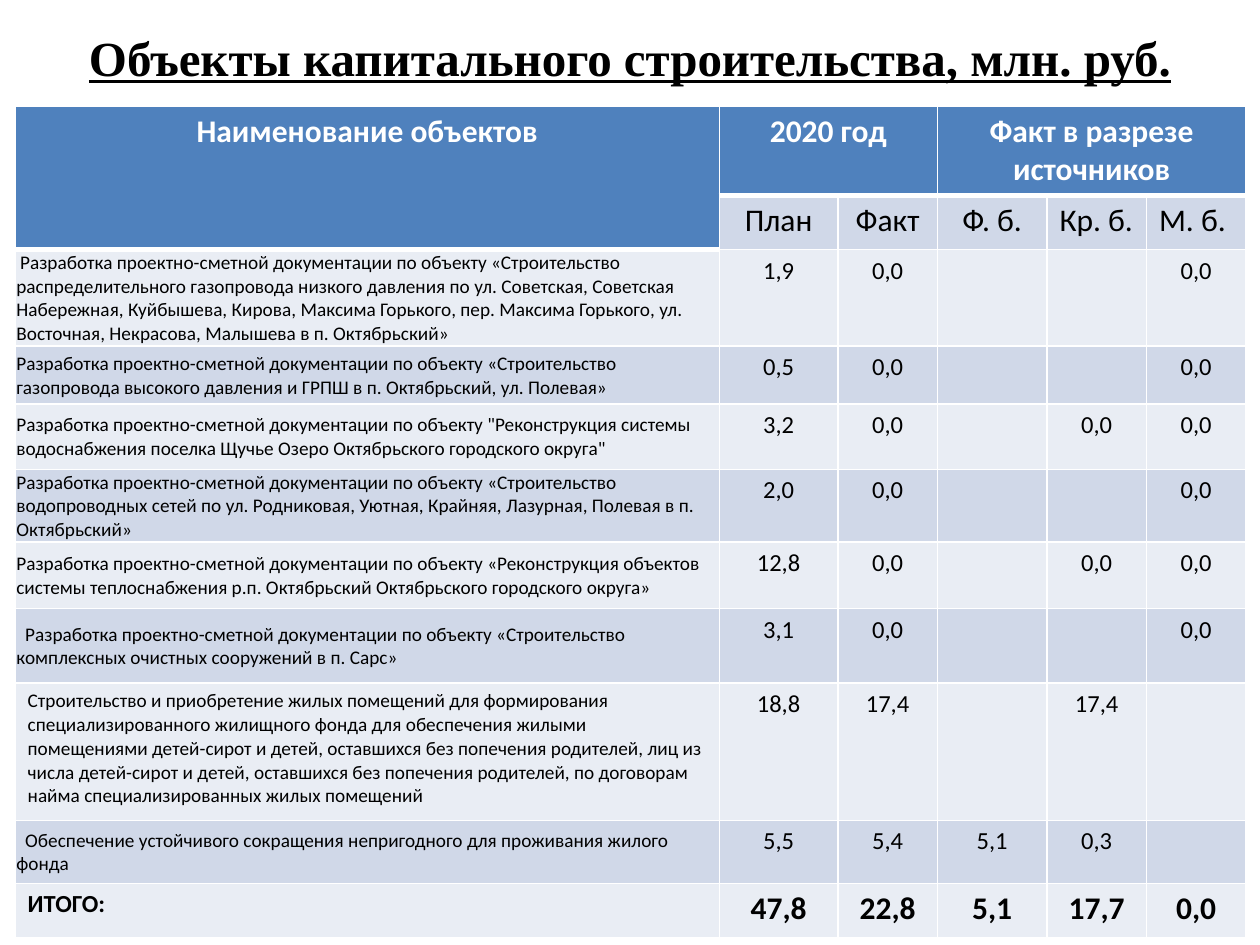
from pptx import Presentation
from pptx.dml.color import RGBColor as Rgb
from pptx.enum.text import MSO_ANCHOR as Anchor, PP_ALIGN as Align
from pptx.oxml.ns import qn
from pptx.util import Inches, Pt
from lxml.etree import SubElement

COLORS = {
    "header": "4F81BD",
    "dark": "D0D8E8",
    "light": "E9EDF4",
    "white": "FFFFFF",
    "black": "000000",
}
SLIDE_WIDTH, SLIDE_HEIGHT = Inches(10), Inches(7.5)
COLUMN_INCHES = [5.59, 0.94, 0.79, 0.87, 0.79, 0.79]
ROW_INCHES = [0.68, 0.43, 0.75, 0.46, 0.52, 0.5, 0.53, 0.59, 1.09, 0.5, 0.43]

TITLE_FORMAT = {"name": "Times New Roman", "size": Pt(28), "bold": True, "underline": True}
HEADER_FORMAT = {"name": "Calibri", "size": Pt(18), "bold": True}
SUBHEADER_FORMAT = {"name": "Calibri", "size": Pt(18), "bold": False}
NAME_FORMAT = {"name": "Calibri", "size": Pt(11), "bold": False}
VALUE_FORMAT = {"name": "Calibri", "size": Pt(14), "bold": False}
TOTAL_NAME_FORMAT = {"name": "Calibri", "size": Pt(14), "bold": True}
TIGHT_CELL = {
    "vertical_anchor": Anchor.MIDDLE,
    "margin_left": Inches(0.01),
    "margin_right": Inches(0.01),
    "margin_top": Inches(0.01),
    "margin_bottom": 0,
}

TITLE = "Объекты капитального строительства, млн. руб."
GROUPS = [
    (0, 1, 0, "Наименование объектов"),
    (1, 0, 2, "2020 год"),
    (3, 0, 5, "Факт в разрезе источников"),
]
SUBHEADERS = ["План", "Факт", "Ф. б.", "Кр. б.", "М. б."]
PROJECT = "Разработка проектно-сметной документации по объекту "
OBJECTS = [
    (PROJECT + "«Строительство распределительного газопровода низкого давления по "
     "ул. Советская, Советская Набережная, Куйбышева, Кирова, Максима Горького, "
     "пер. Максима Горького, ул. Восточная, Некрасова, Малышева в п. Октябрьский»",
     0.03, True, ["1,9", "0,0", "", "", "0,0"]),
    (PROJECT + "«Строительство газопровода высокого давления и ГРПШ "
     "в п. Октябрьский, ул. Полевая»",
     0, True, ["0,5", "0,0", "", "", "0,0"]),
    (PROJECT + '"Реконструкция системы водоснабжения поселка Щучье Озеро '
     'Октябрьского городского округа"',
     0, True, ["3,2", "0,0", "", "0,0", "0,0"]),
    (PROJECT + "«Строительство водопроводных сетей по ул. Родниковая, Уютная, "
     "Крайняя, Лазурная, Полевая в п. Октябрьский»",
     0, True, ["2,0", "0,0", "", "", "0,0"]),
    (PROJECT + "«Реконструкция объектов системы теплоснабжения р.п. Октябрьский "
     "Октябрьского городского округа»",
     0, True, ["12,8", "0,0", "", "0,0", "0,0"]),
    (PROJECT + "«Строительство комплексных очистных сооружений в п. Сарс»",
     0.07, True, ["3,1", "0,0", "", "", "0,0"]),
    ("Строительство и приобретение жилых помещений для формирования "
     "специализированного жилищного фонда для обеспечения жилыми помещениями "
     "детей-сирот и детей, оставшихся без попечения родителей, лиц из числа "
     "детей-сирот и детей, оставшихся без попечения родителей, по договорам "
     "найма специализированных жилых помещений",
     0, False, ["18,8", "17,4", "", "17,4", ""]),
    ("Обеспечение устойчивого сокращения непригодного для проживания жилого фонда",
     0.07, True, ["5,5", "5,4", "5,1", "0,3", ""]),
]
TOTALS = ["47,8", "22,8", "5,1", "17,7", "0,0"]


def apply(target, values):
    for name, value in values.items():
        setattr(target, name, value)


def place(shape, left, top, width, height):
    apply(shape, {
        "left": int(SLIDE_WIDTH * left),
        "top": int(SLIDE_HEIGHT * top),
        "width": int(SLIDE_WIDTH * width),
        "height": int(SLIDE_HEIGHT * height),
    })


def write(frame, text, font_format, color="black", align=Align.CENTER, indent=0):
    paragraph = frame.paragraphs[0]
    paragraph.alignment = align
    if indent:
        paragraph._p.get_or_add_pPr().set("indent", str(Inches(indent)))
    run = paragraph.add_run()
    run.text = text
    apply(run.font, font_format)
    run.font.color.rgb = Rgb.from_string(COLORS[color])


def add_title(slide):
    title = slide.shapes.title
    place(title, 0.05, 0.01, 0.9, 0.1)
    title.text_frame.vertical_anchor = Anchor.MIDDLE
    write(title.text_frame, TITLE, TITLE_FORMAT)


def add_border(cell, side, points):
    line = SubElement(cell._tc.get_or_add_tcPr(), qn(f"a:ln{side}"), w=str(Pt(points)))
    SubElement(SubElement(line, qn("a:solidFill")), qn("a:srgbClr"), val=COLORS["white"])


def style_cell(cell, row, column):
    header = row == 0 or (row == 1 and column == 0)
    below_header = row == (2 if column == 0 else 1)
    borders = {"L": 1, "R": 1, "T": 3 if below_header else 1, "B": 3 if header else 1}
    for side, points in borders.items():
        add_border(cell, side, points)
    cell.fill.solid()
    band = "header" if header else "dark" if row % 2 else "light"
    cell.fill.fore_color.rgb = Rgb.from_string(COLORS[band])


def write_values(table, row, values, font_format):
    for column, text in enumerate(values, 1):
        if text:
            write(table.cell(row, column).text_frame, text, font_format)


def add_table(slide):
    frame = slide.shapes.add_table(len(ROW_INCHES), len(COLUMN_INCHES), 0, 0, 0, 0)
    place(frame, 0.012, 0.112, 0.976, 0.87)
    table = frame.table
    for column, width in zip(table.columns, COLUMN_INCHES):
        column.width = Inches(width)
    for row, height in zip(table.rows, ROW_INCHES):
        row.height = Inches(height)
    for row in range(len(ROW_INCHES)):
        for column in range(len(COLUMN_INCHES)):
            style_cell(table.cell(row, column), row, column)
    return table


def fill_table(table):
    for first, last_row, last_column, text in GROUPS:
        cell = table.cell(0, first)
        cell.merge(table.cell(last_row, last_column))
        write(cell.text_frame, text, HEADER_FORMAT, "white")
    write_values(table, 1, SUBHEADERS, SUBHEADER_FORMAT)
    for column in (4, 5):
        table.cell(1, column).text_frame.paragraphs[0].alignment = Align.LEFT
    for row, (name, indent, tight, values) in enumerate(OBJECTS, 2):
        cell = table.cell(row, 0)
        if tight:
            apply(cell, TIGHT_CELL)
        write(cell.text_frame, name, NAME_FORMAT, align=Align.LEFT, indent=indent)
        write_values(table, row, values, VALUE_FORMAT)
    last = len(ROW_INCHES) - 1
    write(table.cell(last, 0).text_frame, "ИТОГО:", TOTAL_NAME_FORMAT, align=Align.LEFT)
    write_values(table, last, TOTALS, HEADER_FORMAT)


def main():
    presentation = Presentation()
    apply(presentation, {"slide_width": SLIDE_WIDTH, "slide_height": SLIDE_HEIGHT})
    slide = presentation.slides.add_slide(presentation.slide_layouts[5])
    add_title(slide)
    fill_table(add_table(slide))
    presentation.save("out.pptx")


if __name__ == "__main__":
    main()
